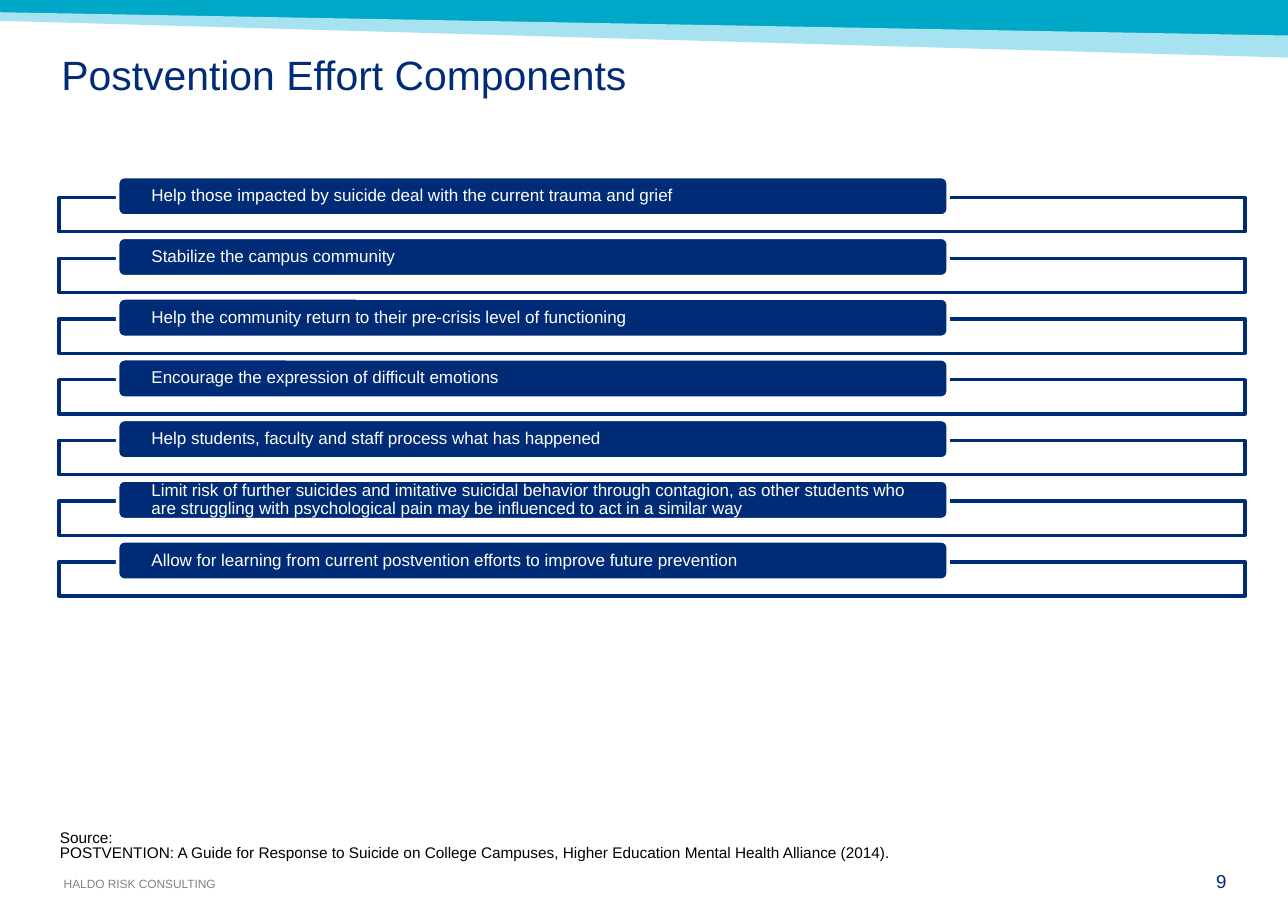
from dataclasses import dataclass

import pptx
import pptx.dml.color
import pptx.enum.shapes
import pptx.enum.text
import pptx.util

WIDE, HIGH = 10.5, 7.5
COLS, ROWS = 210, 150
NAVY, WHITE = "002C77", "FFFFFF"
SHAPE = pptx.enum.shapes.MSO_SHAPE
ALIGN = pptx.enum.text.PP_ALIGN
ANCHOR = pptx.enum.text.MSO_ANCHOR


@dataclass(frozen=True)
class Box:
    col: float
    row: float
    cols: float
    rows: float

    def down(self, rows: float) -> "Box":
        return Box(self.col, self.row + rows, self.cols, self.rows)


@dataclass(frozen=True)
class Band:
    color: str
    spots: tuple


BANDS = (
    Band("00A8C8", ((0, 0), (COLS, 0), (COLS, 6.4), (0, 2.4))),
    Band("A6E2EF", ((0, 2), (COLS, 5.8), (COLS, 9.4), (0, 3.4))),
)
GOALS = (
    "Help those impacted by suicide deal with the current trauma and grief",
    "Stabilize the campus community",
    "Help the community return to their pre-crisis level of functioning",
    "Encourage the expression of difficult emotions",
    "Help students, faculty and staff process what has happened",
    "Limit risk of further suicides and imitative suicidal behavior through contagion, "
    "as other students who are struggling with psychological pain may be influenced "
    "to act in a similar way",
    "Allow for learning from current postvention efforts to improve future prevention",
)
FRAME = Box(9.6, 32.2, 193.4, 5.6)
BAR = Box(19.2, 28.8, 135.4, 6.4)
STEP = 9.9


def across(cols: float) -> int:
    return pptx.util.Inches(WIDE * cols / COLS)


def along(rows: float) -> int:
    return pptx.util.Inches(HIGH * rows / ROWS)


def place(box: Box) -> tuple:
    return across(box.col), along(box.row), across(box.cols), along(box.rows)


def tint(color: str) -> pptx.dml.color.RGBColor:
    return pptx.dml.color.RGBColor.from_string(color)


def paint(shape, fill: str, line: str = "") -> None:
    shape.shadow.inherit = False
    shape.fill.solid()
    shape.fill.fore_color.rgb = tint(fill)
    if line:
        shape.line.color.rgb = tint(line)
        shape.line.width = pptx.util.Pt(2)
    else:
        shape.line.fill.background()


def write(shape, text: str, *, size: float, color: str, space: float = 1,
          align=ALIGN.LEFT, anchor=ANCHOR.TOP, pad: tuple = (0, 0, 0, 0)) -> None:
    """Fill a shape with text; pad is left, top, right, bottom in grid cells."""
    frame = shape.text_frame
    frame.auto_size = pptx.enum.text.MSO_AUTO_SIZE.NONE
    frame.word_wrap = True
    frame.vertical_anchor = anchor
    frame.margin_left, frame.margin_right = across(pad[0]), across(pad[2])
    frame.margin_top, frame.margin_bottom = along(pad[1]), along(pad[3])
    frame.text = text
    for part in frame.paragraphs:
        part.alignment = align
        part.line_spacing = space
        part.font.name = "Arial"
        part.font.size = pptx.util.Pt(size)
        part.font.color.rgb = tint(color)


def label(slide, box: Box, text: str, **style) -> None:
    write(slide.shapes.add_textbox(*place(box)), text, **style)


def draw_band(slide, band: Band) -> None:
    first, *rest = [(across(col), along(row)) for col, row in band.spots]
    pen = slide.shapes.build_freeform(*first)
    pen.add_line_segments(rest, close=True)
    paint(pen.convert_to_shape(), band.color)


def draw_goal(slide, text: str, drop: float) -> None:
    frame = slide.shapes.add_shape(SHAPE.RECTANGLE, *place(FRAME.down(drop)))
    paint(frame, WHITE, NAVY)
    bar = slide.shapes.add_shape(SHAPE.ROUNDED_RECTANGLE, *place(BAR.down(drop)))
    paint(bar, NAVY, WHITE)
    write(bar, text, size=10, color=WHITE, space=0.9,
          anchor=ANCHOR.MIDDLE, pad=(5.2, 0, 5.2, 0))


def main() -> None:
    deck = pptx.Presentation()
    deck.slide_width = pptx.util.Inches(WIDE)
    deck.slide_height = pptx.util.Inches(HIGH)
    slide = deck.slides.add_slide(deck.slide_layouts.get_by_name("Title Only"))

    for band in BANDS:
        draw_band(slide, band)

    title = slide.shapes.title
    title.left, title.top, title.width, title.height = place(Box(10, 8.4, 190, 15.2))
    write(title, "Postvention Effort Components", size=24, color=NAVY,
          space=0.83, pad=(0, 1, 2, 1))

    for turn, goal in enumerate(GOALS):
        draw_goal(slide, goal, turn * STEP)

    label(slide, Box(7.8, 134.4, 150.2, 7.2),
          "Source:\nPOSTVENTION: A Guide for Response to Suicide on College Campuses, "
          "Higher Education Mental Health Alliance (2014).",
          size=9, color="000000", space=0.86, pad=(2, 1, 2, 1))
    label(slide, Box(10.4, 143, 63.2, 2.2), "HALDO RISK CONSULTING",
          size=7, color="7C848A", anchor=ANCHOR.BOTTOM)
    label(slide, Box(190.2, 141.8, 9.8, 3.6), "9",
          size=11, color=NAVY, align=ALIGN.RIGHT)
    deck.save("out.pptx")


if __name__ == "__main__":
    main()
